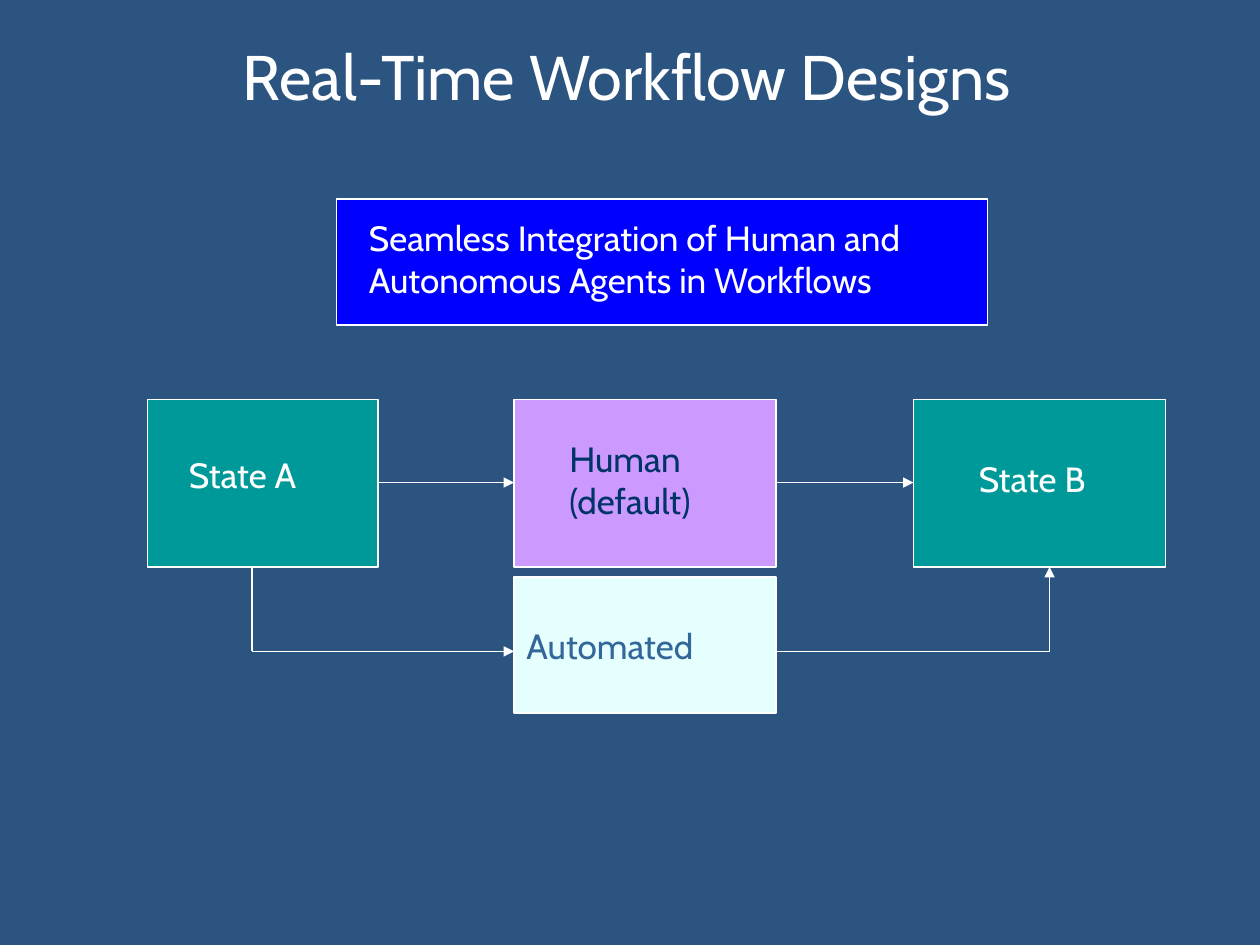
from pptx import Presentation
from pptx.dml.color import RGBColor
from pptx.enum import shapes, text
from pptx.oxml import ns, xmlchemy
from pptx.util import Inches, Pt

COLORS = {
    "background": "2B5481",
    "white": "FFFFFF",
    "banner": "0000FF",
    "state": "009999",
    "human": "CC99FF",
    "human_text": "003366",
    "automated": "E5FFFF",
    "automated_text": "336699",
}
FONT = "Cabin"


def color(key):
    return RGBColor.from_string(COLORS[key])


def write(frame, wording, size, ink):
    frame.text = wording
    for paragraph in frame.paragraphs:
        paragraph.alignment = text.PP_ALIGN.LEFT
        for run in paragraph.runs:
            run.font.name = FONT
            run.font.size = Pt(size)
            run.font.color.rgb = color(ink)


def add_label(slide, left, top, width, height, wording, size=20, ink="white", wrap=False):
    label = slide.shapes.add_textbox(Inches(left), Inches(top), Inches(width), Inches(height))
    frame = label.text_frame
    frame.word_wrap = wrap
    frame.auto_size = text.MSO_AUTO_SIZE.SHAPE_TO_FIT_TEXT
    write(frame, wording, size, ink)


def add_block(slide, left, top, width, height, fill):
    block = slide.shapes.add_shape(
        shapes.MSO_SHAPE.RECTANGLE, Inches(left), Inches(top), Inches(width), Inches(height)
    )
    block.shadow.inherit = False
    block.fill.solid()
    block.fill.fore_color.rgb = color(fill)
    block.line.color.rgb = color("white")
    block.line.width = Pt(0.75)
    return block


def add_flow(slide, start, end, arrow=True):
    flow = slide.shapes.add_connector(
        shapes.MSO_CONNECTOR.STRAIGHT, *(Inches(value) for value in (*start, *end))
    )
    flow.line.color.rgb = color("white")
    flow.line.width = Pt(0.75)
    if arrow:
        tail = xmlchemy.OxmlElement("a:tailEnd")
        tail.set("type", "triangle")
        flow.line._get_or_add_ln().append(tail)
    properties = flow._element.find(ns.qn("p:spPr"))
    properties.append(xmlchemy.OxmlElement("a:effectLst"))


def add_banner(slide, left, top, width, height):
    add_block(slide, left, top, width, height, "banner")
    add_label(slide, left + 0.16, top + 0.09, width - 0.34, height - 0.23,
              "Seamless Integration of Human and Autonomous Agents in Workflows", wrap=True)


def add_workflow(slide, left, top, width, height):
    step_height = 1.33
    automated_height = 1.08
    state_a_right = left + 1.83
    step_left, step_width = left + 2.91, 2.08
    step_right = step_left + step_width
    state_b_width = 2
    state_b_left = left + width - state_b_width
    bottom = top + step_height
    automated_top = top + height - automated_height

    add_block(slide, left, top, state_a_right - left, step_height, "state")
    add_block(slide, step_left, top, step_width, step_height, "human")
    add_block(slide, state_b_left, top, state_b_width, step_height, "state")
    automated = add_block(slide, step_left, automated_top, step_width, automated_height, "automated")
    automated.text_frame.word_wrap = False
    automated.text_frame.vertical_anchor = text.MSO_ANCHOR.MIDDLE
    write(automated.text_frame, "Automated", 20, "automated_text")

    human_y, automated_y = top + 0.66, top + 2
    exit_x, entry_x = left + 0.83, state_b_left + 1.08
    add_flow(slide, (state_a_right, human_y), (step_left, human_y))
    add_flow(slide, (step_right, human_y), (state_b_left, human_y))
    add_flow(slide, (exit_x, bottom), (exit_x, automated_y), arrow=False)
    add_flow(slide, (exit_x, automated_y), (step_left, automated_y))
    add_flow(slide, (step_right, automated_y), (entry_x, automated_y), arrow=False)
    add_flow(slide, (entry_x, automated_y), (entry_x, bottom))

    add_label(slide, left + 0.23, top + 0.38, 1.19, 0.5, "State A")
    add_label(slide, step_left + 0.34, top + 0.25, 1.35, 0.9, "Human\n(default)", ink="human_text")
    add_label(slide, state_b_left + 0.42, top + 0.41, 1.17, 0.5, "State B")


def main():
    deck = Presentation()
    deck.slide_width, deck.slide_height = Inches(10), Inches(7.5)
    slide = deck.slides.add_slide(deck.slide_layouts[6])
    slide.background.fill.solid()
    slide.background.fill.fore_color.rgb = color("background")
    add_label(slide, 1.83, 0.25, 6.53, 0.71, "Real-Time Workflow Designs", size=36)
    add_banner(slide, 2.67, 1.58, 5.17, 1)
    add_workflow(slide, 1.17, 3.17, 8.08, 2.49)
    deck.save("out.pptx")


if __name__ == "__main__":
    main()
